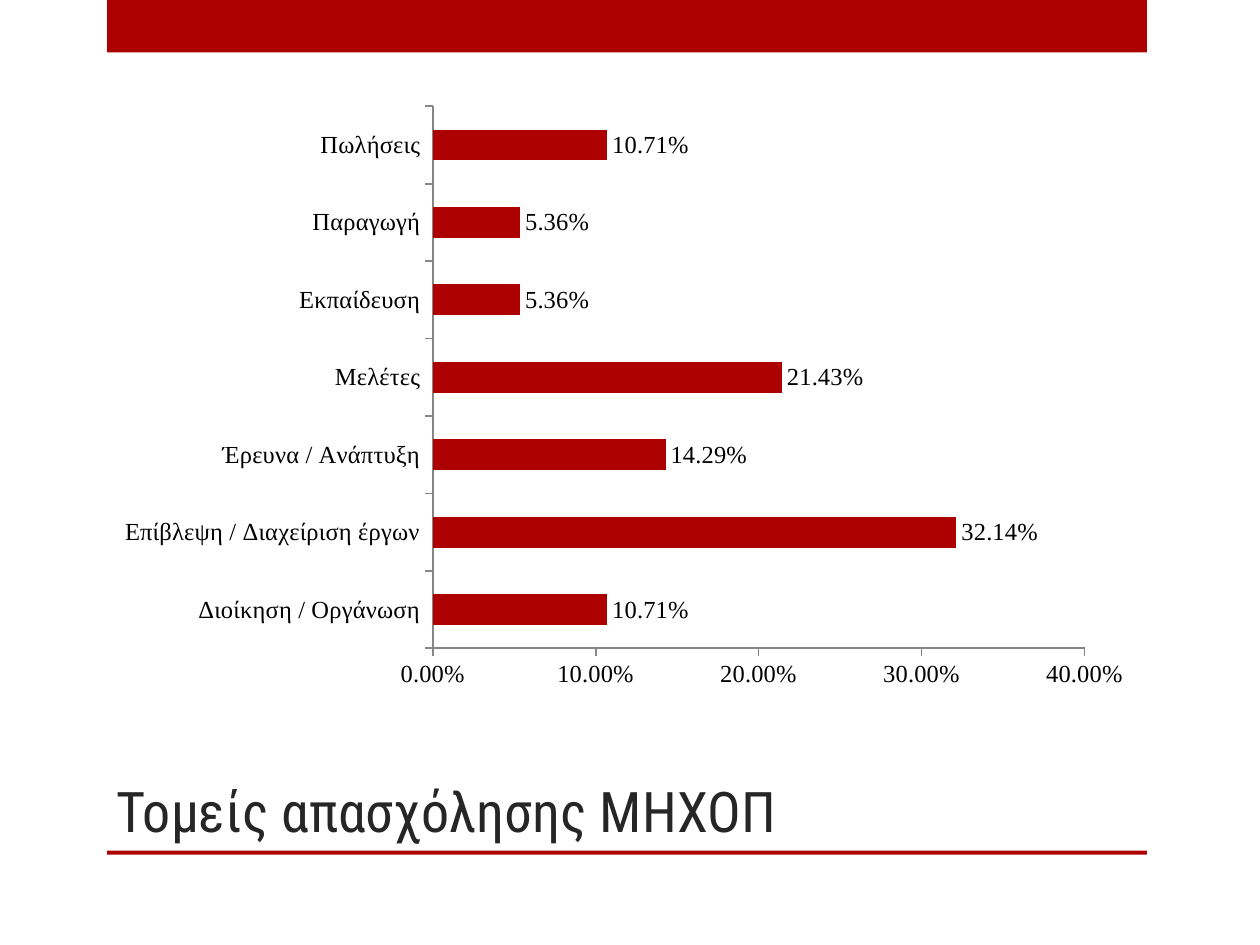
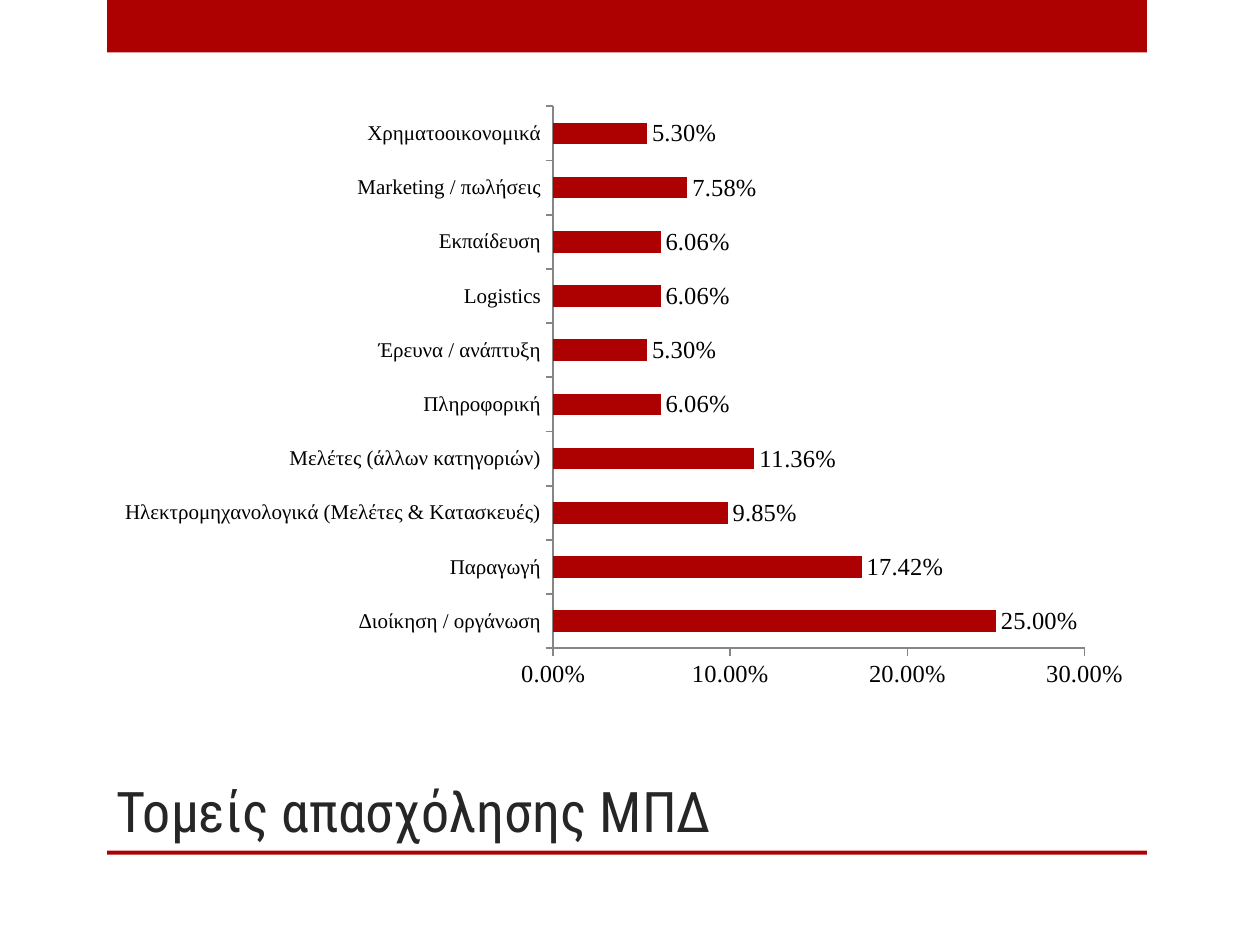
from dataclasses import dataclass

from pptx import Presentation
from pptx.chart.data import CategoryChartData
from pptx.dml.color import RGBColor
from pptx.enum.chart import XL_CHART_TYPE, XL_LABEL_POSITION, XL_TICK_MARK
from pptx.enum.shapes import MSO_SHAPE
from pptx.enum.text import MSO_ANCHOR
from pptx.util import Cm, Pt

BAR_CLUSTERED = XL_CHART_TYPE.BAR_CLUSTERED
OUTSIDE_END = XL_LABEL_POSITION.OUTSIDE_END
TICK_OUTSIDE = XL_TICK_MARK.OUTSIDE
TICK_NONE = XL_TICK_MARK.NONE
RECTANGLE = MSO_SHAPE.RECTANGLE
BOTTOM = MSO_ANCHOR.BOTTOM

RED = "AD0101"
TITLE_COLOR = "262626"
TEXT_COLOR = "000000"
AXIS_COLOR = "868686"
TITLE_FONT = "Roboto Condensed"
CHART_FONT = "Times New Roman"
PERCENT = "0.00%"
BLANK_LAYOUT = 6


@dataclass(frozen=True)
class Box:
    left: float
    top: float
    width: float
    height: float

    def lengths(self) -> tuple:
        return tuple(Cm(n) for n in (self.left, self.top, self.width, self.height))


@dataclass(frozen=True)
class FieldsSlide:
    title: str
    shares: dict[str, float]
    category_size: int
    axis_maximum: float


BANDS = (Box(2.16, 0, 20.96, 1.06), Box(2.16, 17.15, 20.96, 0.08))
TITLE_BOX = Box(2.1, 14.32, 18.84, 2.82)
CHART_BOX = Box(2.1, 1.9, 20.96, 12.22)

# Shares run from the bottom bar to the top bar
FIELDS_SLIDES = (
    FieldsSlide("Τομείς απασχόλησης ΜΗΧΟΠ", {
        "Διοίκηση / Οργάνωση": 0.1071,
        "Επίβλεψη / Διαχείριση έργων": 0.3214,
        "Έρευνα / Ανάπτυξη": 0.1429,
        "Μελέτες": 0.2143,
        "Εκπαίδευση": 0.0536,
        "Παραγωγή": 0.0536,
        "Πωλήσεις": 0.1071,
    }, category_size=14, axis_maximum=0.4),
    FieldsSlide("Τομείς απασχόλησης ΜΠΔ", {
        "Διοίκηση / οργάνωση": 0.25,
        "Παραγωγή": 0.1742,
        "Ηλεκτρομηχανολογικά (Μελέτες & Κατασκευές)": 0.0985,
        "Μελέτες (άλλων κατηγοριών)": 0.1136,
        "Πληροφορική": 0.0606,
        "Έρευνα / ανάπτυξη": 0.053,
        "Logistics": 0.0606,
        "Εκπαίδευση": 0.0606,
        "Marketing / πωλήσεις": 0.0758,
        "Χρηματοοικονομικά": 0.053,
    }, category_size=12, axis_maximum=0.3),
)


def rgb(color: str) -> RGBColor:
    return RGBColor.from_string(color)


def apply(target, values: dict) -> None:
    for name, value in values.items():
        setattr(target, name, value)


def style_font(font, name: str, size: int, color: str) -> None:
    apply(font, {"name": name, "size": Pt(size)})
    font.color.rgb = rgb(color)


def fill(target, color: str) -> None:
    target.fill.solid()
    target.fill.fore_color.rgb = rgb(color)


def add_band(slide, box: Box) -> None:
    shape = slide.shapes.add_shape(RECTANGLE, *box.lengths())
    shape.shadow.inherit = False
    fill(shape, RED)
    shape.line.fill.background()


def add_title(slide, text: str) -> None:
    frame = slide.shapes.add_textbox(*TITLE_BOX.lengths()).text_frame
    apply(frame, {"word_wrap": True, "vertical_anchor": BOTTOM})
    run = frame.paragraphs[0].add_run()
    run.text = text
    style_font(run.font, TITLE_FONT, 32, TITLE_COLOR)


def style_axis(axis, size: int) -> None:
    apply(axis, {"has_major_gridlines": False, "major_tick_mark": TICK_OUTSIDE,
                 "minor_tick_mark": TICK_NONE})
    axis.format.line.color.rgb = rgb(AXIS_COLOR)
    axis.format.line.width = Pt(1)
    style_font(axis.tick_labels.font, CHART_FONT, size, TEXT_COLOR)


def add_bar_chart(slide, content: FieldsSlide) -> None:
    data = CategoryChartData(number_format=PERCENT)
    data.categories = list(content.shares)
    data.add_series("Series 1", list(content.shares.values()))
    chart = slide.shapes.add_chart(BAR_CLUSTERED, *CHART_BOX.lengths(), data).chart
    apply(chart, {"has_title": False, "has_legend": False})
    style_font(chart.font, CHART_FONT, 18, TEXT_COLOR)

    # Axes
    style_axis(chart.category_axis, content.category_size)
    style_axis(chart.value_axis, 14)
    apply(chart.value_axis, {"minimum_scale": 0, "major_unit": 0.1,
                             "maximum_scale": content.axis_maximum})
    number_format = {"number_format": PERCENT, "number_format_is_linked": False}
    apply(chart.value_axis.tick_labels, number_format)

    # Bars and their labels
    plot = chart.plots[0]
    apply(plot, {"gap_width": 150, "vary_by_categories": False,
                 "has_data_labels": True})
    fill(plot.series[0].format, RED)
    labels = plot.data_labels
    apply(labels, {"show_value": True, "position": OUTSIDE_END, **number_format})
    style_font(labels.font, CHART_FONT, 14, TEXT_COLOR)


def main() -> None:
    presentation = Presentation()
    apply(presentation, {"slide_width": Cm(25.4), "slide_height": Cm(19.05)})
    for content in FIELDS_SLIDES:
        slide = presentation.slides.add_slide(presentation.slide_layouts[BLANK_LAYOUT])
        for band in BANDS:
            add_band(slide, band)
        add_title(slide, content.title)
        add_bar_chart(slide, content)
    presentation.save("out.pptx")


if __name__ == "__main__":
    main()
